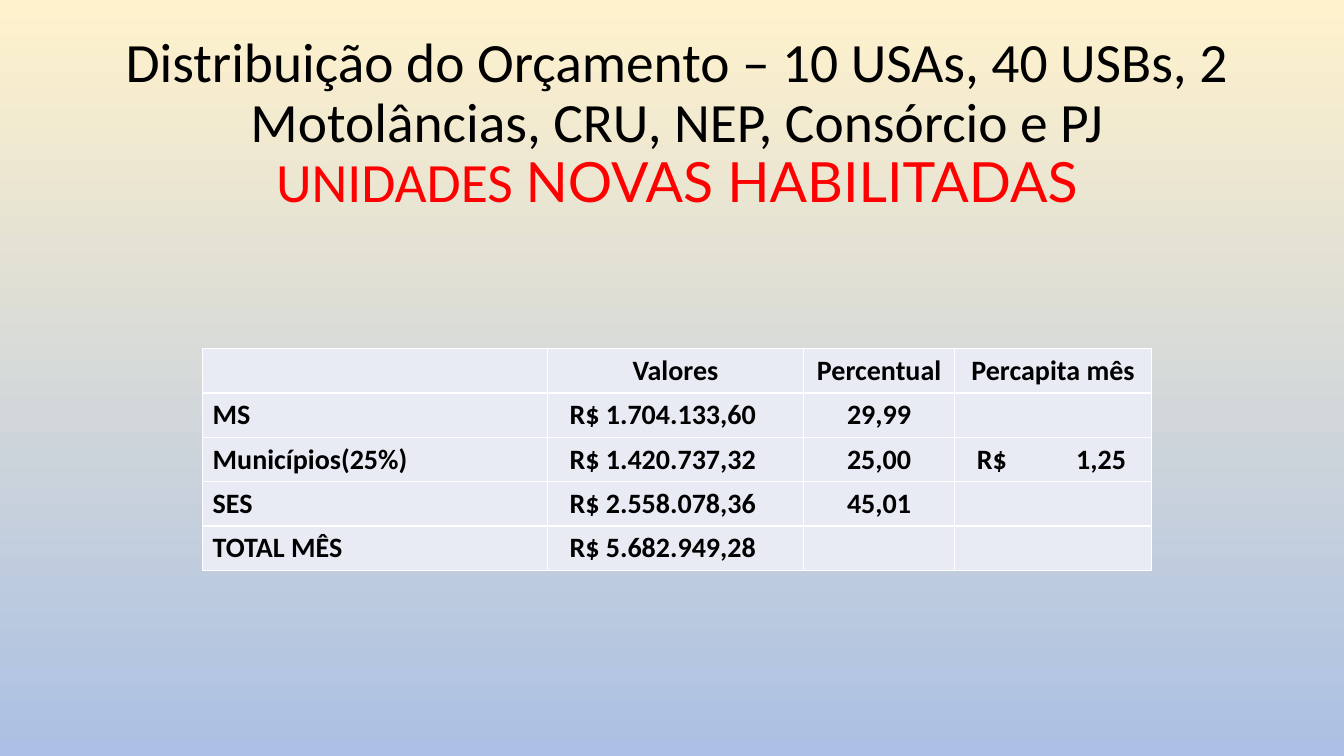
from lxml import etree
from pptx import Presentation
from pptx import util as u
from pptx.dml.color import RGBColor
from pptx.enum import text
from pptx.oxml.ns import qn

BLACK = RGBColor(0x00, 0x00, 0x00)
RED = RGBColor(0xFF, 0x00, 0x00)
WHITE = RGBColor(0xFF, 0xFF, 0xFF)
CELL_FILL = RGBColor(0xE8, 0xEB, 0xF4)
SKY = [RGBColor(0xFF, 0xF2, 0xCC), RGBColor(0xAB, 0xC0, 0xE4)]

# Content
HEADING = [
    ("Distribuição do Orçamento – 10 USAs, 40 USBs, 2 Motolâncias, CRU, NEP, Consórcio e PJ",
     "Calibri", BLACK),
    None,  # line break
    ("UNIDADES ", "Calibri", RED),
    ("NOVAS HABILITADAS", "Lato", RED),
]
BUDGET = [
    ("", "Valores", "Percentual", "Percapita mês"),
    ("MS", "R$ 1.704.133,60", "29,99", ""),
    ("Municípios(25%)", "R$ 1.420.737,32", "25,00", "R$\t1,25"),
    ("SES", "R$ 2.558.078,36", "45,01", ""),
    ("TOTAL MÊS", "R$ 5.682.949,28", "", ""),
]
COLUMN_WIDTHS = [3.42, 2.54, 1.5, 1.95]
ROW_HEIGHT = 0.44
LABEL_INSET, MONEY_INSET = 0.1, 0.22
AMOUNT_TAB = 1.48  # right edge of the amount, from the currency sign
CENTER, LEFT = text.PP_ALIGN.CENTER, text.PP_ALIGN.LEFT


def draw_borders(cell):
    properties = cell._tc.get_or_add_tcPr()
    for position, side in enumerate(("lnL", "lnR", "lnT", "lnB")):
        line = etree.Element(qn(f"a:{side}"), w=str(u.Pt(0.96)))
        solid = etree.SubElement(line, qn("a:solidFill"))
        etree.SubElement(solid, qn("a:srgbClr"), val=str(WHITE))
        properties.insert(position, line)


def add_right_tab(paragraph, inches):
    stops = etree.Element(qn("a:tabLst"))
    etree.SubElement(stops, qn("a:tab"), pos=str(u.Inches(inches)), algn="r")
    paragraph._p.get_or_add_pPr().insert(0, stops)


prs = Presentation()
prs.slide_width, prs.slide_height = u.Inches(13.33), u.Inches(7.5)
slide = prs.slides.add_slide(prs.slide_layouts[6])

# Background
backdrop = slide.background.fill
backdrop.gradient()
backdrop.gradient_angle = 270
for stop, color, place in zip(backdrop.gradient_stops, SKY, (0, 1)):
    stop.color.rgb, stop.position = color, place

# Heading
heading = slide.shapes.add_textbox(
    u.Inches(1.05), u.Inches(0.4), u.Inches(11.33), u.Inches(1.67)).text_frame
heading.word_wrap = True
heading.vertical_anchor = text.MSO_ANCHOR.MIDDLE
headline = heading.paragraphs[0]
headline.alignment, headline.line_spacing = CENTER, 0.9
headline.font.size = u.Pt(39.6)
for part in HEADING:
    if part is None:
        headline.add_line_break()
        continue
    run = headline.add_run()
    run.text, run.font.name, run.font.color.rgb = part
    run.font.size = u.Pt(39.6)

# Budget table
budget = slide.shapes.add_table(
    len(BUDGET), len(COLUMN_WIDTHS), u.Inches(2.01), u.Inches(3.46),
    u.Inches(sum(COLUMN_WIDTHS)), u.Inches(ROW_HEIGHT * len(BUDGET))).table
for column, width in zip(budget.columns, COLUMN_WIDTHS):
    column.width = u.Inches(width)

for r, row in enumerate(BUDGET):
    budget.rows[r].height = u.Inches(ROW_HEIGHT)
    for c, entry in enumerate(row):
        cell = budget.cell(r, c)
        cell.fill.solid()
        cell.fill.fore_color.rgb = CELL_FILL
        draw_borders(cell)
        cell.vertical_anchor = text.MSO_ANCHOR.BOTTOM
        is_money = entry.startswith("R$")
        cell.margin_left = u.Inches(MONEY_INSET if is_money else LABEL_INSET)
        cell.text = entry
        paragraph = cell.text_frame.paragraphs[0]
        paragraph.alignment = LEFT if is_money or c == 0 else CENTER
        font = paragraph.font
        font.name, font.size, font.bold = "Calibri", u.Pt(20), True
        font.color.rgb = BLACK
        if "\t" in entry:
            add_right_tab(paragraph, AMOUNT_TAB)

prs.save("out.pptx")
